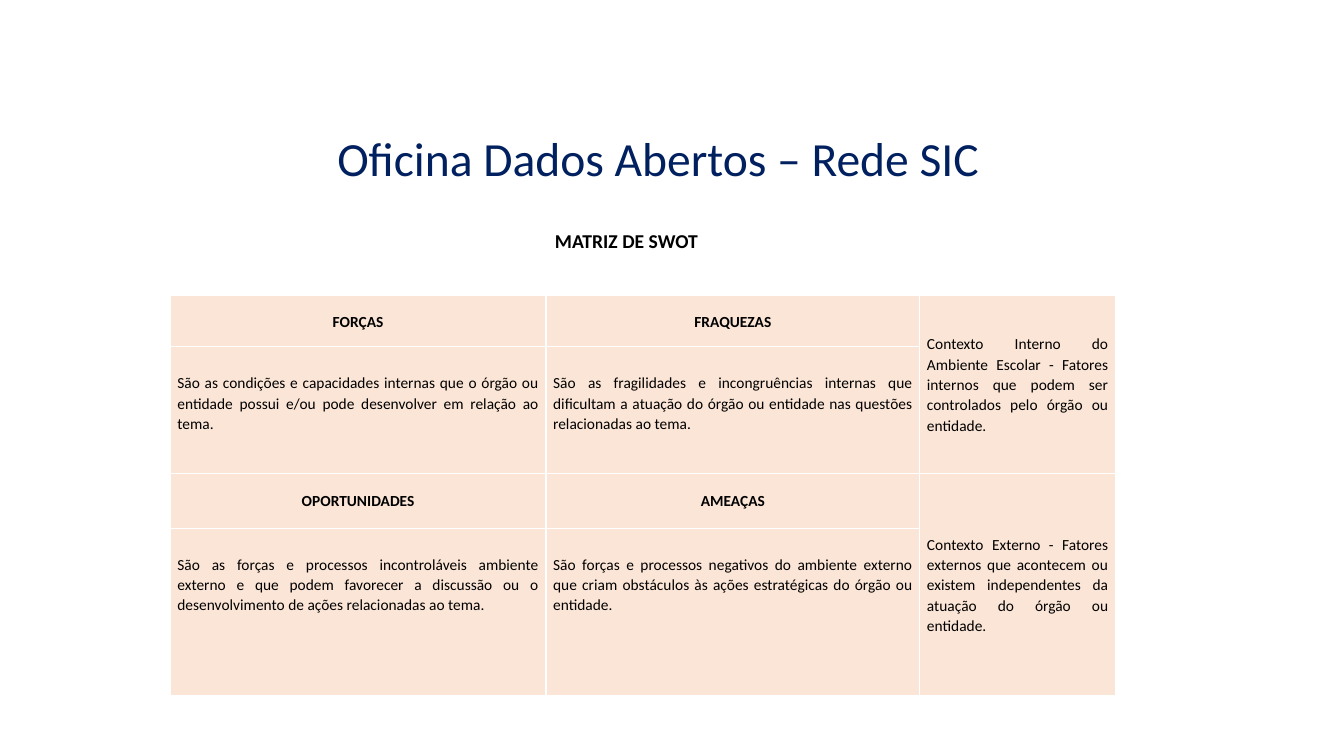
from lxml.etree import SubElement
from pptx import Presentation
from pptx.dml.color import RGBColor
from pptx.enum.text import MSO_ANCHOR, MSO_AUTO_SIZE, PP_ALIGN
from pptx.oxml.ns import qn
from pptx.util import Cm, Pt

NAVY = RGBColor(0x00, 0x20, 0x60)
BLACK = RGBColor(0x00, 0x00, 0x00)
WHITE = RGBColor(0xFF, 0xFF, 0xFF)
PEACH = RGBColor(0xFB, 0xE5, 0xD6)

COLUMN_WIDTHS = [9.47, 9.42, 4.93]
ROW_HEIGHTS = [1.3, 3.2, 1.37, 4.22]
QUADRANTS = [
    [
        ("FORÇAS", "São as condições e capacidades internas que o órgão ou entidade "
         "possui e/ou pode desenvolver em relação ao tema."),
        ("FRAQUEZAS", "São as fragilidades e incongruências internas que dificultam a "
         "atuação do órgão ou entidade nas questões relacionadas ao tema."),
    ],
    [
        ("OPORTUNIDADES", "São as forças e processos incontroláveis ambiente externo e "
         "que podem favorecer a discussão ou o desenvolvimento de ações relacionadas "
         "ao tema."),
        ("AMEAÇAS", "São forças e processos negativos do ambiente externo que criam "
         "obstáculos às ações estratégicas do órgão ou entidade."),
    ],
]
CONTEXTS = [
    "Contexto Interno do Ambiente Escolar - Fatores internos que podem ser "
    "controlados pelo órgão ou entidade.",
    "Contexto Externo - Fatores externos que acontecem ou existem independentes da "
    "atuação do órgão ou entidade.",
]


def write(frame, text, size, color, align, bold=False):
    paragraph = frame.paragraphs[0]
    paragraph.alignment = align
    run = paragraph.add_run()
    run.text = text
    run.font.name = "Calibri"
    run.font.size = Pt(size)
    run.font.bold = bold
    run.font.color.rgb = color
    return paragraph


def set_title(slide, text):
    title = slide.shapes.title
    title.left, title.top = Cm(3.1), Cm(2.36)
    title.width, title.height = Cm(26.97), Cm(2.34)
    frame = title.text_frame
    frame.auto_size = MSO_AUTO_SIZE.NONE
    frame.vertical_anchor = MSO_ANCHOR.BOTTOM
    frame.margin_bottom = Cm(0.05)
    write(frame, text, 34, NAVY, PP_ALIGN.CENTER).line_spacing = 0.7


def add_subtitle(slide, text):
    subtitle = slide.shapes.add_textbox(Cm(13.72), Cm(5.64), Cm(4.14), Cm(0.86))
    frame = subtitle.text_frame
    frame.word_wrap = False
    frame.auto_size = MSO_AUTO_SIZE.SHAPE_TO_FIT_TEXT
    frame.vertical_anchor = MSO_ANCHOR.MIDDLE
    write(frame, text, 14, BLACK, PP_ALIGN.CENTER, bold=True)


def style_cell(cell):
    properties = cell._tc.get_or_add_tcPr()
    for side in ("a:lnL", "a:lnR", "a:lnT", "a:lnB"):
        line = SubElement(properties, qn(side), w=str(Pt(1)))
        fill = SubElement(line, qn("a:solidFill"))
        SubElement(fill, qn("a:srgbClr"), val=str(WHITE))
    cell.fill.solid()
    cell.fill.fore_color.rgb = PEACH
    cell.margin_left = cell.margin_right = Cm(0.18)
    cell.margin_top = cell.margin_bottom = 0


def write_cell(cell, text, align, bold=False):
    cell.vertical_anchor = MSO_ANCHOR.MIDDLE
    paragraph = write(cell.text_frame, text, 11, BLACK, align, bold)
    paragraph.line_spacing = 1.07
    paragraph.space_after = Pt(4)


def add_swot_table(slide):
    swot = slide.shapes.add_table(
        len(ROW_HEIGHTS), len(COLUMN_WIDTHS), Cm(4.29), Cm(7.44),
        Cm(sum(COLUMN_WIDTHS)), Cm(sum(ROW_HEIGHTS))).table
    swot.first_row = swot.horz_banding = False
    for column, width in zip(swot.columns, COLUMN_WIDTHS):
        column.width = Cm(width)
    for row, height in zip(swot.rows, ROW_HEIGHTS):
        row.height = Cm(height)
    for cell in swot.iter_cells():
        style_cell(cell)
    for band, (quadrants, context) in enumerate(zip(QUADRANTS, CONTEXTS)):
        top = 2 * band
        for column, (heading, description) in enumerate(quadrants):
            write_cell(swot.cell(top, column), heading, PP_ALIGN.CENTER, bold=True)
            body = swot.cell(top + 1, column)
            write_cell(body, description, PP_ALIGN.JUSTIFY)
            body.vertical_anchor = MSO_ANCHOR.TOP
            body.margin_top = Cm(0.65)
        context_cell = swot.cell(top, 2)
        context_cell.merge(swot.cell(top + 1, 2))
        write_cell(context_cell, context, PP_ALIGN.JUSTIFY)


def main():
    deck = Presentation()
    deck.slide_width, deck.slide_height = Cm(33.87), Cm(19.05)
    slide = deck.slides.add_slide(deck.slide_layouts[5])
    set_title(slide, "Oficina Dados Abertos – Rede SIC")
    add_swot_table(slide)
    add_subtitle(slide, "MATRIZ DE SWOT")
    deck.save("out.pptx")


if __name__ == "__main__":
    main()
